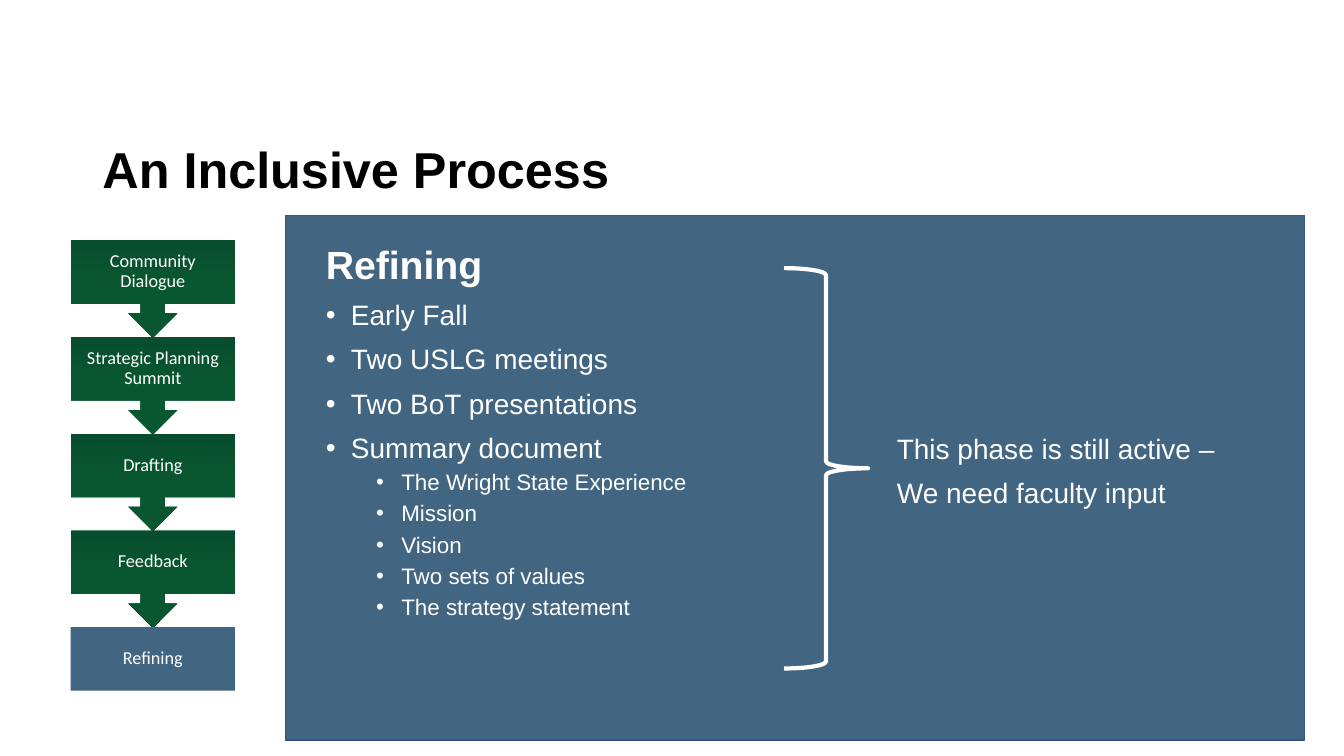
from lxml.etree import SubElement
from pptx import Presentation
from pptx.dml.color import RGBColor
from pptx.enum.shapes import MSO_SHAPE
from pptx.enum.text import MSO_ANCHOR, MSO_AUTO_SIZE, PP_ALIGN
from pptx.oxml.ns import qn
from pptx.util import Pt

COLORS = {
    "white": "FFFFFF",
    "black": "000000",
    "slate": "426581",
    "border": "325491",
    "green_dark": "084D2E",
    "green": "095730",
}


def rgb(name):
    return RGBColor.from_string(COLORS[name])


def write(tf, text, size, color="white", font="Arial", bold=False,
          align=PP_ALIGN.LEFT, before=0, level=0, indent=0, bullet=False):
    """Fill the empty first paragraph, or add another one after it."""
    p = tf.paragraphs[0]
    if p.runs:
        p = tf.add_paragraph()
    p.level = level
    p.alignment = align
    p.line_spacing = 0.9
    p.space_before = Pt(before)
    p.space_after = Pt(0)
    pPr = p._p.get_or_add_pPr()
    pPr.set("marL", str(Pt(indent)))
    pPr.set("indent", str(Pt(-18 if bullet else 0)))
    if bullet:
        SubElement(pPr, qn("a:buFont")).set("typeface", "Arial")
        SubElement(pPr, qn("a:buChar")).set("char", "•")
    else:
        SubElement(pPr, qn("a:buNone"))
    r = p.add_run()
    r.text = text
    r.font.name = font
    r.font.size = Pt(size)
    r.font.bold = bold
    r.font.color.rgb = rgb(color)


prs = Presentation()
prs.slide_width, prs.slide_height = Pt(960), Pt(540)
s = prs.slides.add_slide(prs.slide_layouts[1])
title, body = s.placeholders

# Title
title.left, title.top, title.width, title.height = Pt(66), Pt(91.5), Pt(828), Pt(62.5)
title.text_frame.vertical_anchor = MSO_ANCHOR.MIDDLE
title.text_frame.auto_size = MSO_AUTO_SIZE.NONE
write(title.text_frame, "An Inclusive Process", 36, color="black", bold=True)

# Process steps: callouts pointing down, ending in the current phase
steps = ["Community Dialogue", "Strategic Planning Summit", "Drafting",
         "Feedback", "Refining"]
for i, step in enumerate(steps):
    current = i == len(steps) - 1
    kind = MSO_SHAPE.RECTANGLE if current else MSO_SHAPE.DOWN_ARROW_CALLOUT
    sp = s.shapes.add_shape(kind, Pt(50.5), Pt(171.5 + 69.1 * i),
                            Pt(117.3), Pt(45.4 if current else 69.8))
    sp.shadow.inherit = False
    sp.line.fill.background()
    if current:
        sp.fill.solid()
        sp.fill.fore_color.rgb = rgb("slate")
    else:
        sp.fill.gradient()
        sp.fill.gradient_angle = 270
        stops = zip(sp.fill.gradient_stops, ["green_dark", "green"], [0, 0.5])
        for stop, color, position in stops:
            stop.color.rgb = rgb(color)
            stop.position = position
    tf = sp.text_frame
    tf.word_wrap = True
    tf.vertical_anchor = MSO_ANCHOR.MIDDLE
    tf.margin_left = tf.margin_right = tf.margin_top = tf.margin_bottom = Pt(7)
    write(tf, step, 13, font="Calibri", align=PP_ALIGN.CENTER)

# Panel behind the phase details
panel = s.shapes.add_shape(MSO_SHAPE.RECTANGLE, Pt(204), Pt(154), Pt(728), Pt(374.5))
panel.shadow.inherit = False
panel.fill.solid()
panel.fill.fore_color.rgb = rgb("slate")
panel.line.color.rgb = rgb("border")
panel.line.width = Pt(1)

# Phase details, brought in front of the panel
body.element.getparent().append(body.element)
body.left, body.top, body.width, body.height = Pt(225.5), Pt(171.5), Pt(348), Pt(348.5)
tf = body.text_frame
tf.auto_size = MSO_AUTO_SIZE.NONE
write(tf, "Refining", 28, bold=True)
for text in ["Early Fall", "Two USLG meetings", "Two BoT presentations",
             "Summary document"]:
    write(tf, text, 20, before=10, indent=18, bullet=True)
for text in ["The Wright State Experience", "Mission", "Vision",
             "Two sets of values", "The strategy statement"]:
    write(tf, text, 16, before=5, level=1, indent=54, bullet=True)

# Request for input
note = s.shapes.add_textbox(Pt(633.5), Pt(307.5), Pt(284.5), Pt(53.5))
tf = note.text_frame
tf.word_wrap = True
write(tf, "This phase is still active –", 20)
write(tf, "We need faculty input", 20, before=10)

# Brace joining the details to the request
brace = s.shapes.add_shape(MSO_SHAPE.RIGHT_BRACE, Pt(560), Pt(191.5), Pt(60), Pt(286))
brace.shadow.inherit = False
brace.fill.background()
brace.line.color.rgb = rgb("white")
brace.line.width = Pt(3)

prs.save("out.pptx")
